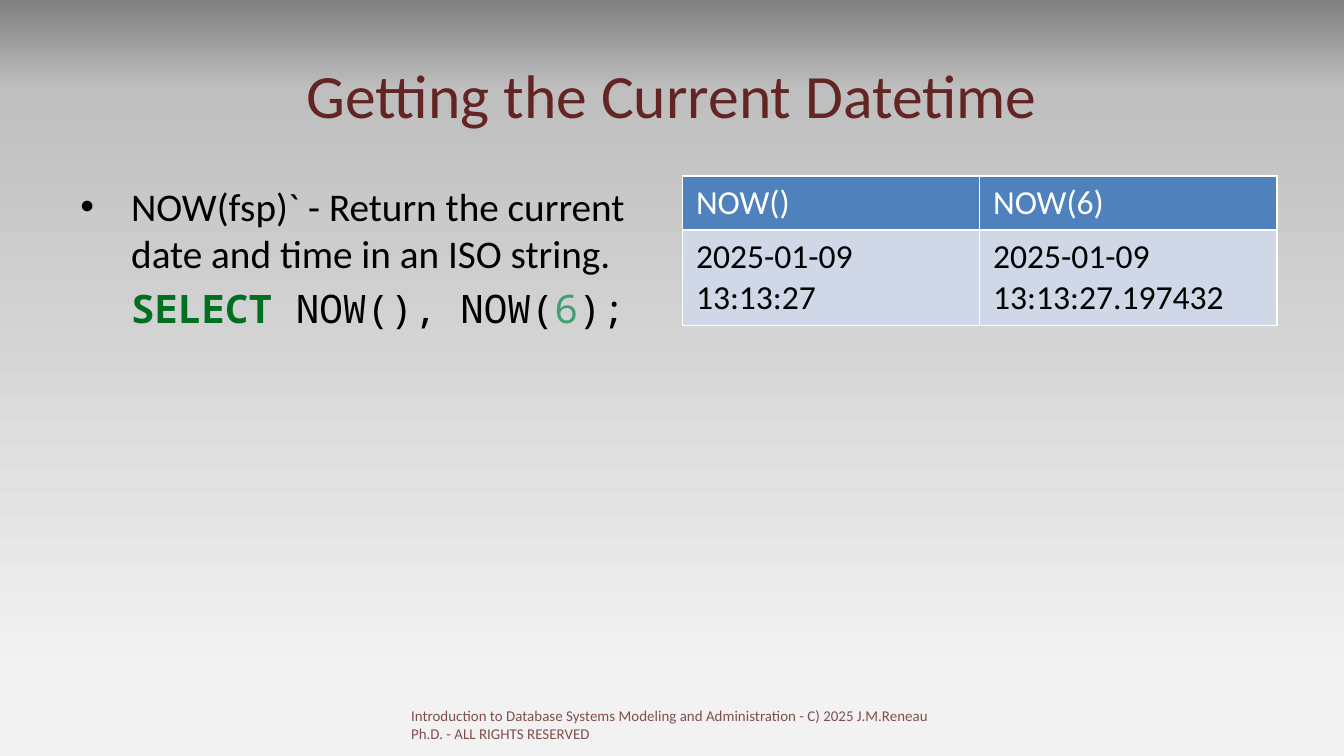
import lxml.etree
import pptx
import pptx.dml.color
import pptx.enum.text
import pptx.oxml.ns
import pptx.util
from pptx.util import Cm

COLOURS = {
    "maroon": "632523",
    "black": "000000",
    "white": "FFFFFF",
    "keyword": "007020",
    "number": "40A070",
    "header": "4F81BD",
    "band": "D0D8E8",
}
BACKDROP = [(0, "808080"), (12, "BFBFBF"), (90, "F2F2F2")]
CODE = [("SELECT", "keyword"), (" NOW(), NOW(", "black"), ("6", "number"), (");", "black")]
RESULTS = [
    ["NOW()", "NOW(6)"],
    ["2025-01-09 13:13:27", "2025-01-09 13:13:27.197432"],
]
FOOTER = (
    "Introduction to Database Systems Modeling and Administration"
    " - C) 2025 J.M.Reneau Ph.D. - ALL RIGHTS RESERVED"
)


def rgb(name):
    """Return the named colour."""
    return pptx.dml.color.RGBColor.from_string(COLOURS[name])


def add_node(parent, tag, **attributes):
    """Append a drawing element to its parent."""
    node = lxml.etree.SubElement(parent, pptx.oxml.ns.qn(tag))
    for key, value in attributes.items():
        node.set(key, str(value))
    return node


def add_span(para, text, size=21, colour="black", font="Calibri", bold=False):
    """Add one formatted run of text to a paragraph."""
    span = para.add_run()
    span.text = text
    span.font.size = pptx.util.Pt(size)
    span.font.name = font
    span.font.bold = bold
    span.font.color.rgb = rgb(colour)


def add_box(page, area):
    """Add a wrapping text box."""
    box = page.shapes.add_textbox(*area)
    box.text_frame.word_wrap = True
    return box


def paint_backdrop(page):
    """Fill the page with a downward grey gradient."""
    fill = page.background.fill
    fill.gradient()
    fill.gradient_angle = 270
    stops = page.element.xpath(".//a:gsLst")[0]
    for stop in list(stops):
        stops.remove(stop)
    for percent, colour in BACKDROP:
        stop = add_node(stops, "a:gs", pos=percent * 1000)
        add_node(stop, "a:srgbClr", val=colour)


def add_title(page, area):
    """Place the centred heading."""
    frame = add_box(page, area).text_frame
    frame.vertical_anchor = pptx.enum.text.MSO_ANCHOR.MIDDLE
    para = frame.paragraphs[0]
    para.alignment = pptx.enum.text.PP_ALIGN.CENTER
    add_span(para, "Getting the Current Datetime", size=33, colour="maroon")


def add_explanation(page, area):
    """Place the bullet and the query below it."""
    frame = add_box(page, area).text_frame
    bullet, query = frame.paragraphs[0], frame.add_paragraph()
    indent = Cm(0.96)
    for para, hanging in ((bullet, -indent), (query, 0)):
        para.space_before = pptx.util.Pt(4)
        properties = para._p.get_or_add_pPr()
        properties.set("marL", str(indent))
        properties.set("indent", str(hanging))
    marks = bullet._p.get_or_add_pPr()
    add_node(marks, "a:buFont", typeface="Arial")
    add_node(marks, "a:buChar", char="•")
    add_span(bullet, "NOW(fsp)` - Return the current date and time in an ISO string.")
    for text, colour in CODE:
        add_span(query, text, colour=colour, font="Noto Sans Mono", bold=colour == "keyword")


def add_borders(cell):
    """Draw white lines on all sides of a cell."""
    properties = cell._tc.get_or_add_tcPr()
    for side in ("a:lnL", "a:lnR", "a:lnT", "a:lnB"):
        line = add_node(properties, side, w=pptx.util.Pt(1))
        add_node(add_node(line, "a:solidFill"), "a:srgbClr", val=COLOURS["white"])


def add_results(page, left, top, width):
    """Place the table of query results."""
    heights = [Cm(1.02), Cm(1.8)]
    frame = page.shapes.add_table(len(RESULTS), len(RESULTS[0]), left, top, width, sum(heights))
    table = frame.table
    table.first_row = table.horz_banding = False
    for row, (height, values) in enumerate(zip(heights, RESULTS)):
        table.rows[row].height = height
        fill, colour = ("band", "black") if row else ("header", "white")
        for column, value in enumerate(values):
            cell = table.cell(row, column)
            add_borders(cell)
            cell.fill.solid()
            cell.fill.fore_color.rgb = rgb(fill)
            add_span(cell.text_frame.paragraphs[0], value, size=18, colour=colour)


def add_footer(page, area):
    """Place the slightly transparent copyright line."""
    box = add_box(page, area)
    add_span(box.text_frame.paragraphs[0], FOOTER, size=8, colour="maroon")
    for colour in box.element.xpath(".//a:srgbClr"):
        add_node(colour, "a:alpha", val=80000)


def main():
    """Build the slide and save it."""
    deck = pptx.Presentation()
    deck.slide_width, deck.slide_height = Cm(25.4), Cm(14.29)
    page = deck.slides.add_slide(deck.slide_layouts[6])
    margin, top, column = Cm(1.27), Cm(3.33), Cm(11.23)
    paint_backdrop(page)
    add_title(page, (margin, Cm(0.58), deck.slide_width - 2 * margin, Cm(2.39)))
    add_explanation(page, (margin, top, column, Cm(9.42)))
    add_results(page, deck.slide_width - margin - column, top, column)
    add_footer(page, (Cm(7.52), Cm(13.23), Cm(10.31), Cm(0.76)))
    deck.save("out.pptx")


if __name__ == "__main__":
    main()
